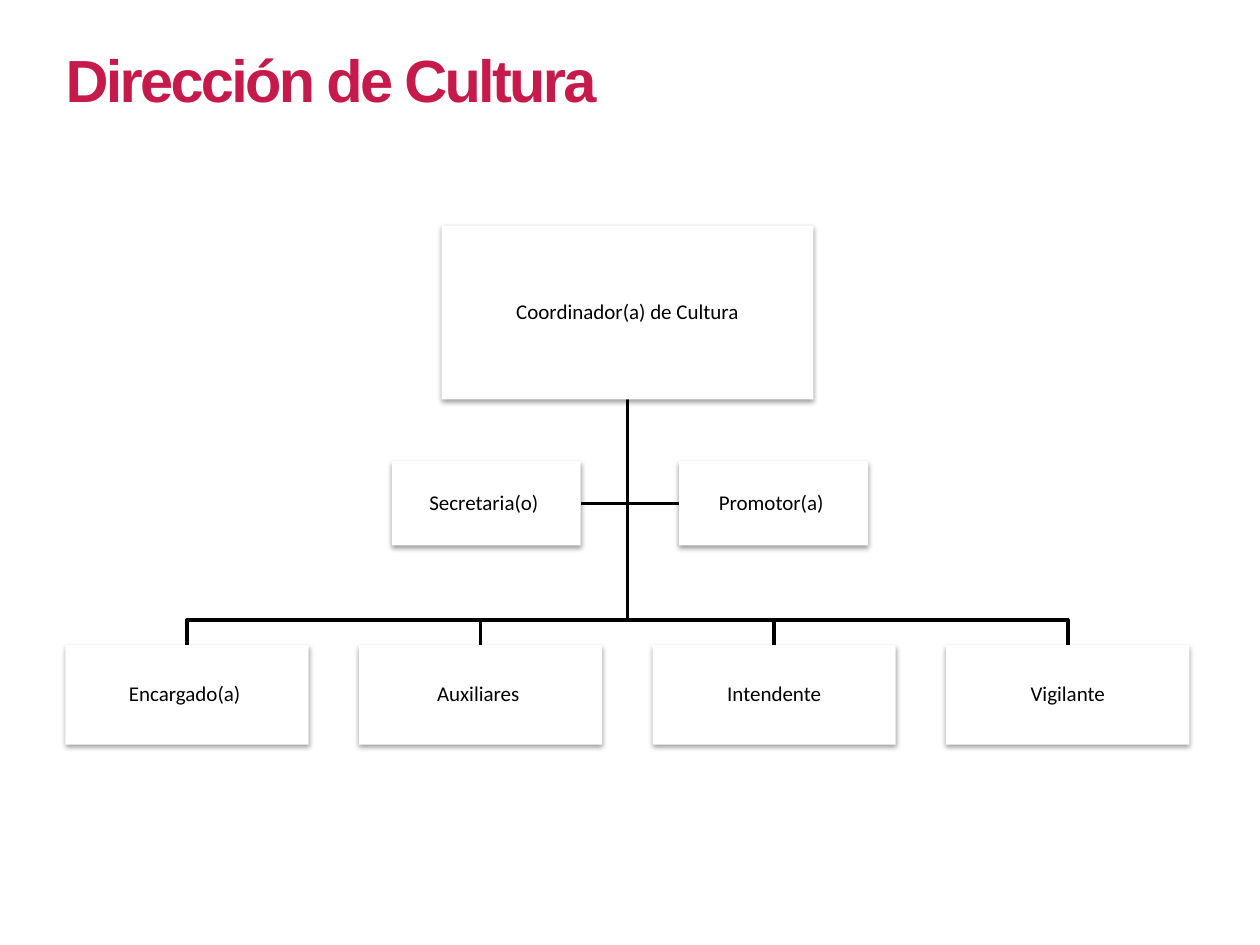
from dataclasses import dataclass

from lxml.etree import SubElement
from pptx import Presentation
from pptx.dml.color import RGBColor
from pptx.enum.shapes import MSO_SHAPE as Shape
from pptx.enum.text import MSO_ANCHOR as Anchor, MSO_AUTO_SIZE as AutoSize, PP_ALIGN as Align
from pptx.oxml.ns import qn
from pptx.util import Inches, Pt


@dataclass(frozen=True)
class Theme:
    title_color: str = "C51A4A"
    text_color: str = "000000"
    line_color: str = "000000"
    card_color: str = "FFFFFF"
    title_font: str = "Arial"
    card_font: str = "Calibri"
    title_size: float = 34
    card_size: float = 12
    line_width: float = 2


@dataclass(frozen=True)
class Box:
    left: float
    top: float
    width: float
    height: float

    @property
    def right(self):
        return self.left + self.width

    @property
    def bottom(self):
        return self.top + self.height

    @property
    def center(self):
        return self.left + self.width / 2

    @property
    def middle(self):
        return self.top + self.height / 2

    def inches(self):
        return [Inches(v) for v in (self.left, self.top, self.width, self.height)]


THEME = Theme()
SLIDE_WIDTH, SLIDE_HEIGHT = 10, 7.5


def write_text(shape, text, *, font, size, color, bold=False, align=Align.LEFT,
               anchor=Anchor.TOP, margins=(0.1, 0.05), line_spacing=1.0, tracking=None):
    frame = shape.text_frame
    frame.word_wrap = True
    frame.auto_size = AutoSize.NONE
    frame.vertical_anchor = anchor
    frame.margin_left = frame.margin_right = Inches(margins[0])
    frame.margin_top = frame.margin_bottom = Inches(margins[1])
    paragraph = frame.paragraphs[0]
    paragraph.alignment = align
    paragraph.line_spacing = line_spacing
    paragraph.space_before = Pt(0)
    run = paragraph.add_run()
    run.text = text
    run.font.name, run.font.size, run.font.bold = font, Pt(size), bold
    run.font.color.rgb = RGBColor.from_string(color)
    if tracking is not None:
        run.font._element.set("spc", str(round(tracking * 100)))


def add_soft_shadow(shape):
    effects = shape._element.spPr.find(qn("a:effectLst"))
    shadow = SubElement(effects, qn("a:outerShdw"), blurRad=str(Pt(3.1)), dist=str(Pt(1.6)),
                        dir="5400000", rotWithShape="0")
    color = SubElement(shadow, qn("a:srgbClr"), val="000000")
    SubElement(color, qn("a:alpha"), val="38000")


def add_card(slide, box, text):
    card = slide.shapes.add_shape(Shape.RECTANGLE, *box.inches())
    card.shadow.inherit = False
    card.fill.solid()
    card.fill.fore_color.rgb = RGBColor.from_string(THEME.card_color)
    card.line.fill.background()
    add_soft_shadow(card)
    write_text(card, text, font=THEME.card_font, size=THEME.card_size, color=THEME.text_color,
               align=Align.CENTER, anchor=Anchor.MIDDLE, margins=(0.01, 0.01), line_spacing=0.9)


def add_branch(slide, *points):
    start, *rest = [(Inches(x), Inches(y)) for x, y in points]
    builder = slide.shapes.build_freeform(*start)
    builder.add_line_segments(rest, close=False)
    branch = builder.convert_to_shape()
    branch.shadow.inherit = False
    branch.fill.background()
    branch.line.color.rgb = RGBColor.from_string(THEME.line_color)
    branch.line.width = Pt(THEME.line_width)


def centered_row(center, top, count, width, height, gap):
    left = center - (count * width + (count - 1) * gap) / 2
    return [Box(left + i * (width + gap), top, width, height) for i in range(count)]


def add_title(slide, box, text):
    title = slide.shapes.title
    title.left, title.top, title.width, title.height = box.inches()
    write_text(title, text, font=THEME.title_font, size=THEME.title_size,
               color=THEME.title_color, bold=True, tracking=-1.5)


def add_org_chart(slide, box, head, assistants, staff):
    # Three levels; the assistants are centred on the slide
    head_box, = centered_row(box.center, box.top, 1, 2.95, 1.38, 0)
    assistant_boxes = centered_row(SLIDE_WIDTH / 2, box.top + 1.87, len(assistants),
                                   1.5, 0.67, 0.78)
    gap, height = 0.4, 0.79
    width = (box.width - gap * (len(staff) - 1)) / len(staff)
    staff_boxes = centered_row(box.center, box.bottom - height, len(staff), width, height, gap)

    # Branches lie behind the cards
    trunk = (head_box.center, head_box.bottom)
    for card in assistant_boxes:
        side = card.right if card.center < trunk[0] else card.left
        add_branch(slide, trunk, (trunk[0], card.middle), (side, card.middle))
    for card in staff_boxes:
        rail = card.top - 0.2
        add_branch(slide, trunk, (trunk[0], rail), (card.center, rail), (card.center, card.top))

    # Cards
    boxes = [head_box, *staff_boxes, *assistant_boxes]
    for card, text in zip(boxes, [head, *staff, *assistants]):
        add_card(slide, card, text)


def main():
    presentation = Presentation()
    presentation.slide_width = Inches(SLIDE_WIDTH)
    presentation.slide_height = Inches(SLIDE_HEIGHT)
    slide = presentation.slides.add_slide(presentation.slide_layouts[5])
    add_title(slide, Box(0.42, 0.29, 6.81, 0.69), "Dirección de Cultura")
    add_org_chart(
        slide, Box(0.52, 1.79, 8.92, 4.12),
        head="Coordinador(a) de Cultura",
        assistants=["Secretaria(o) ", "Promotor(a) "],
        staff=["Encargado(a) ", "Auxiliares ", "Intendente", "Vigilante"],
    )
    presentation.save("out.pptx")


if __name__ == "__main__":
    main()
